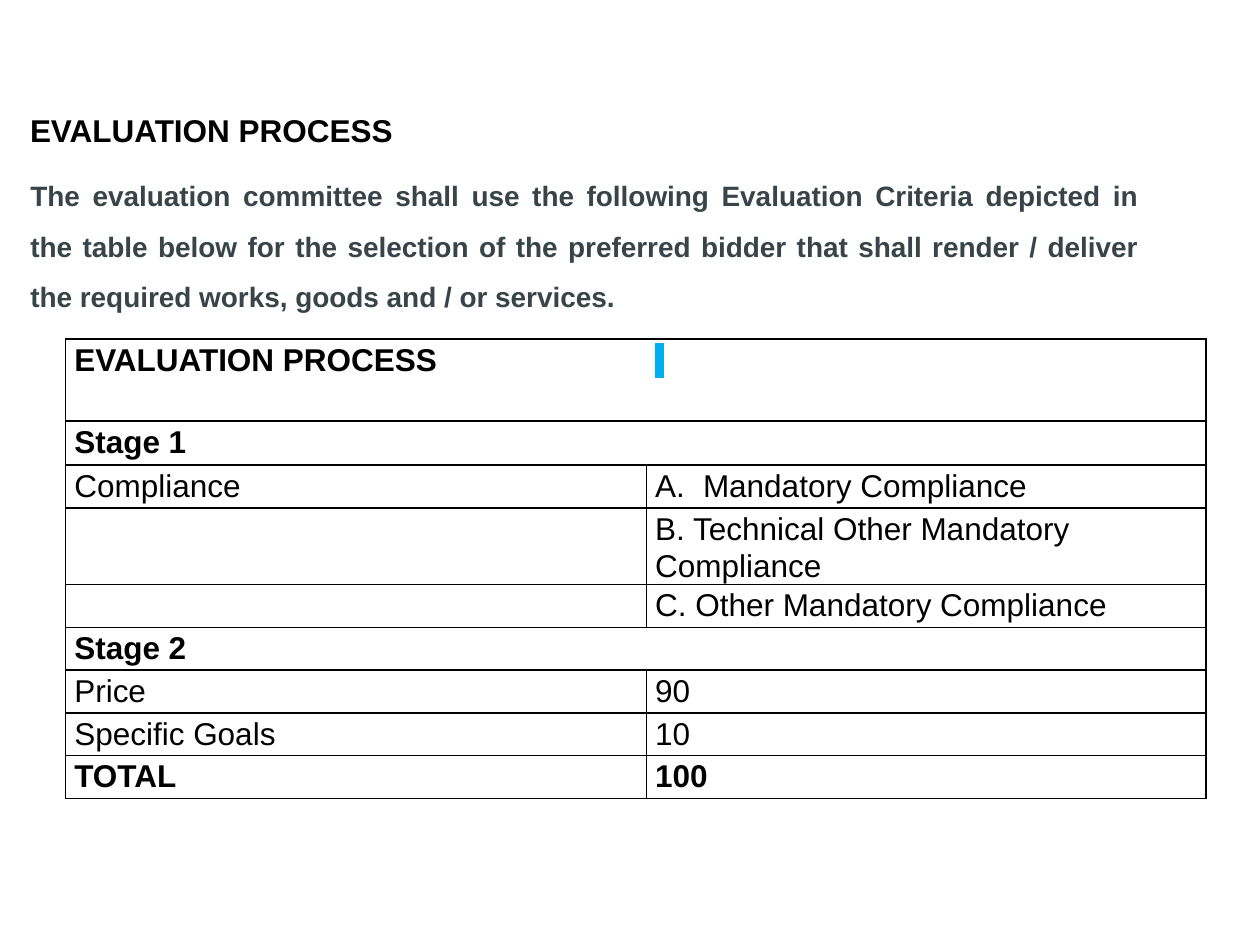
from lxml.etree import SubElement as Sub
from pptx import Presentation
from pptx.dml.color import RGBColor as Rgb
from pptx.enum.text import MSO_ANCHOR as Anchor, MSO_AUTO_SIZE as Fit, PP_ALIGN as Align
from pptx.oxml.ns import qn
from pptx.util import Inches, Pt

HUES = {"ink": "000000", "slate": "394449", "mark": "00ADEF"}
LEAD = ("The evaluation committee shall use the following Evaluation Criteria depicted in "
        "the table below for the selection of the preferred bidder that shall render / "
        "deliver the required works, goods and / or services.")
HEADS = {"EVALUATION PROCESS", "Stage 1", "Stage 2"}
BOLD = HEADS | {"TOTAL", "100"}
ROWS = [
    ("EVALUATION PROCESS", ""),
    ("Stage 1", ""),
    ("Compliance", "Mandatory Compliance"),
    ("", "B. Technical Other Mandatory Compliance"),
    ("", "C. Other Mandatory Compliance"),
    ("Stage 2", ""),
    ("Price", "90"),
    ("Specific Goals", "10"),
    ("TOTAL", "100"),
]


class Page:
    font = "Arial"
    size = 18

    def __init__(self, deck):
        self.slide = deck.slides.add_slide(deck.slide_layouts[5])

    def style(self, para, bold=True, size=None, hue="ink"):
        font = para.font
        font.name, font.size, font.bold = self.font, Pt(size or self.size), bold
        font.color.rgb = Rgb.from_string(HUES[hue])

    def title(self, text, box):
        shape = self.slide.shapes.title
        shape.left, shape.top, shape.width, shape.height = map(Inches, box)
        frame = shape.text_frame
        frame.text = text
        frame.word_wrap, frame.auto_size = True, Fit.NONE
        frame.vertical_anchor = Anchor.MIDDLE
        para = frame.paragraphs[0]
        para.alignment, para.line_spacing = Align.JUSTIFY, 1.5
        self.style(para, size=16, hue="slate")

    def label(self, text, box):
        frame = self.slide.shapes.add_textbox(*map(Inches, box)).text_frame
        frame.text = text
        frame.word_wrap = True
        self.style(frame.paragraphs[0])

    def edge(self, cell, side, shown):
        line = Sub(cell._tc.get_or_add_tcPr(), qn(f"a:ln{side}"), w=str(Pt(1)))
        if shown:
            fill = Sub(line, qn("a:solidFill"))
            Sub(fill, qn("a:srgbClr"), val=HUES["ink"])
        else:
            Sub(line, qn("a:noFill"))

    def number(self, para):
        props = para._p.get_or_add_pPr()
        props.set("marL", str(Inches(0.38)))
        props.set("indent", str(-Inches(0.38)))
        Sub(props, qn("a:buFont"), typeface=self.font)
        Sub(props, qn("a:buAutoNum"), type="alphaUcPeriod")

    def mark(self, para):
        run = para.add_run()
        run.text = " "
        light = Sub(run._r.get_or_add_rPr(), qn("a:highlight"))
        Sub(light, qn("a:srgbClr"), val=HUES["mark"])

    def cell(self, cell, text, hidden):
        cell.margin_left, cell.margin_right = Inches(0.07), Inches(0.08)
        cell.margin_top, cell.margin_bottom = Inches(0.01), 0
        for side in "LRTB":
            self.edge(cell, side, side != hidden)
        cell.fill.background()
        cell.text = text
        para = cell.text_frame.paragraphs[0]
        para.line_spacing = 1.07
        if text == "Mandatory Compliance":
            self.number(para)
        self.style(para, bold=text in BOLD)

    def table(self, rows, box, cols, highs):
        grid = self.slide.shapes.add_table(len(rows), len(cols), *map(Inches, box)).table
        grid.first_row = grid.horz_banding = False
        for col, wide in zip(grid.columns, cols):
            col.width = Inches(wide)
        for line, high, texts in zip(grid.rows, highs, rows):
            line.height = Inches(high)
            inner = "RL" if texts[0] in HEADS else "  "
            for cell, text, hidden in zip(line.cells, texts, inner):
                self.cell(cell, text, hidden)
        self.mark(grid.cell(0, 1).text_frame.paragraphs[0])


def main():
    deck = Presentation()
    deck.slide_width, deck.slide_height = Inches(10), Inches(7.5)
    page = Page(deck)
    page.table(ROWS, (0.52, 2.69, 9.05, 3.68), (4.61, 4.44), [0.65, 0.35] + [0.34] * 7)
    page.title(LEAD, (0.14, 1.71, 9, 0.35))
    page.label("EVALUATION PROCESS", (0.14, 0.83, 6, 0.88))
    deck.save("out.pptx")


if __name__ == "__main__":
    main()
